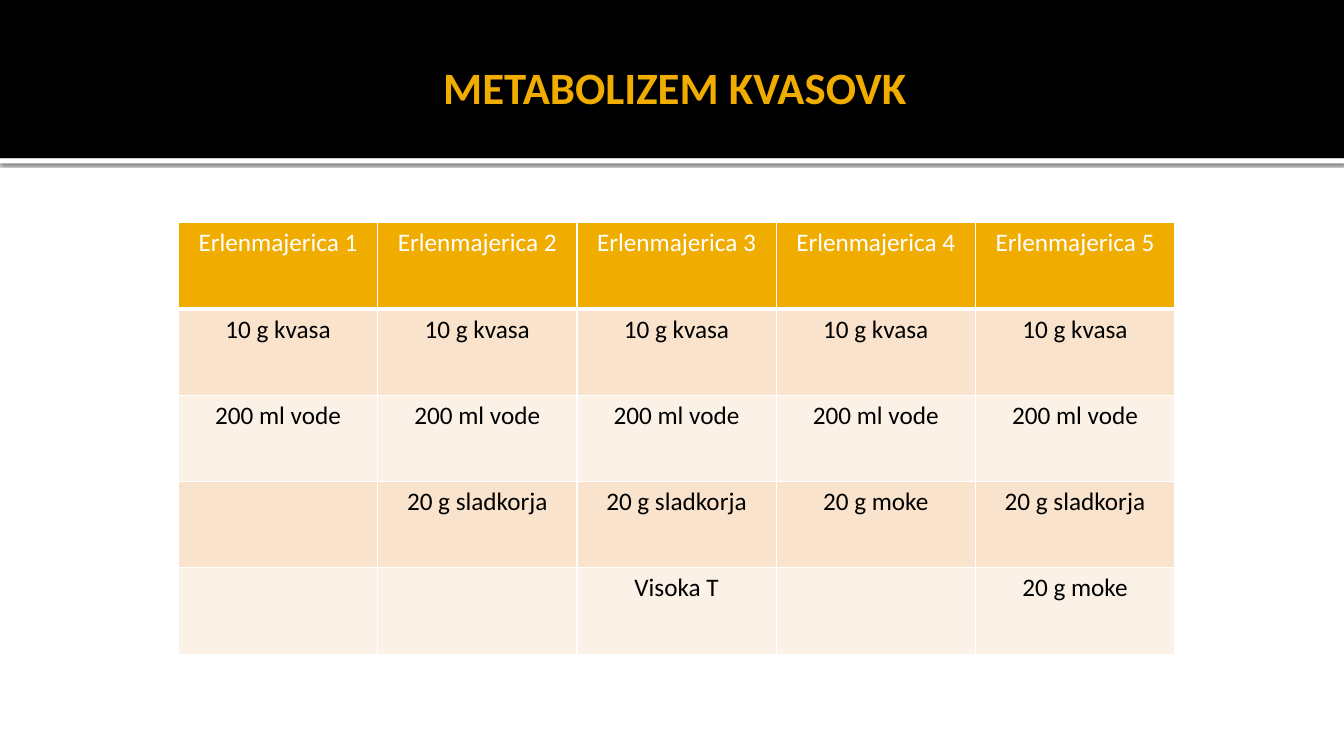
from lxml.etree import SubElement
from pptx import Presentation
from pptx.dml.color import RGBColor
from pptx.enum.shapes import MSO_SHAPE
from pptx.enum.text import MSO_ANCHOR, PP_ALIGN
from pptx.oxml import parse_xml
from pptx.oxml.ns import nsdecls, qn
from pptx.util import Inches, Pt

BLACK = RGBColor(0x00, 0x00, 0x00)
WHITE = RGBColor(0xFF, 0xFF, 0xFF)
GOLD = RGBColor(0xF0, 0xAD, 0x00)
PEACH = RGBColor(0xF9, 0xE3, 0xCC)
CREAM = RGBColor(0xFC, 0xF1, 0xE7)

HEADER_HEIGHT = Inches(1.57)
FLASK_COUNT = 5
ROWS = [
    [f"Erlenmajerica {number}" for number in range(1, FLASK_COUNT + 1)],
    ["10 g kvasa"] * FLASK_COUNT,
    ["200 ml vode"] * FLASK_COUNT,
    ["", "20 g sladkorja", "20 g sladkorja", "20 g moke", "20 g sladkorja"],
    ["", "", "Visoka T", "", "20 g moke"],
]


def write_text(text_frame, text, font_values):
    paragraph = text_frame.paragraphs[0]
    paragraph.alignment = PP_ALIGN.CENTER
    run = paragraph.add_run()
    run.text = text
    run.font.color.rgb = font_values["color"]
    for name in ("name", "size", "bold"):
        setattr(run.font, name, font_values[name])


def add_border(cell, side, position, width):
    line = parse_xml(
        f'<a:{side} {nsdecls("a")} w="{Pt(width)}"><a:solidFill>'
        f'<a:srgbClr val="{WHITE}"/></a:solidFill></a:{side}>'
    )
    cell._tc.get_or_add_tcPr().insert(position, line)


presentation = Presentation()
presentation.slide_width = Inches(13.33)
presentation.slide_height = Inches(7.5)
slide = presentation.slides.add_slide(presentation.slide_layouts[5])
title = slide.shapes.title

bands = [
    (HEADER_HEIGHT, Inches(0.05), WHITE),
    (0, HEADER_HEIGHT, BLACK),
]
for top, height, color in bands:
    band = slide.shapes.add_shape(
        MSO_SHAPE.RECTANGLE, 0, top, presentation.slide_width, height
    )
    band.shadow.inherit = False
    band.fill.solid()
    band.fill.fore_color.rgb = color
    band.line.fill.background()
    title.element.addprevious(band.element)
    if color == WHITE:
        effects = band.element.spPr.find(qn("a:effectLst"))
        shadow = SubElement(
            effects, qn("a:outerShdw"), blurRad=str(Pt(2.5)),
            dist=str(Pt(0.8)), dir="5400000", algn="tl", rotWithShape="0",
        )
        shadow_color = SubElement(shadow, qn("a:srgbClr"), val=str(BLACK))
        SubElement(shadow_color, qn("a:alpha"), val="60000")

title_place = {
    "left": Inches(0.67), "top": Inches(0.17),
    "width": Inches(12), "height": Inches(1.37),
}
for name, value in title_place.items():
    setattr(title, name, value)
title_format = {
    "margin_left": Inches(0.1), "margin_top": Inches(0.05),
    "margin_right": Inches(0.05), "margin_bottom": Inches(0.05),
    "vertical_anchor": MSO_ANCHOR.MIDDLE, "word_wrap": True,
}
for name, value in title_format.items():
    setattr(title.text_frame, name, value)
title_font = {"name": "Calibri", "size": Pt(32), "bold": True, "color": GOLD}
write_text(title.text_frame, "METABOLIZEM KVASOVK", title_font)

table = slide.shapes.add_table(
    len(ROWS), FLASK_COUNT, Inches(1.77), Inches(2.21), Inches(9.88), Inches(4.28)
).table
for row_index, row in enumerate(ROWS):
    is_header = row_index == 0
    fill_color = GOLD if is_header else (CREAM, PEACH)[row_index % 2]
    cell_font = {
        "name": "Calibri", "size": Pt(18), "bold": False,
        "color": WHITE if is_header else BLACK,
    }
    for column_index, text in enumerate(row):
        cell = table.cell(row_index, column_index)
        cell.fill.solid()
        cell.fill.fore_color.rgb = fill_color
        for position, side in enumerate(("lnL", "lnR", "lnT", "lnB")):
            add_border(cell, side, position, 3 if is_header and side == "lnB" else 1)
        if text:
            write_text(cell.text_frame, text, cell_font)

presentation.save("out.pptx")
